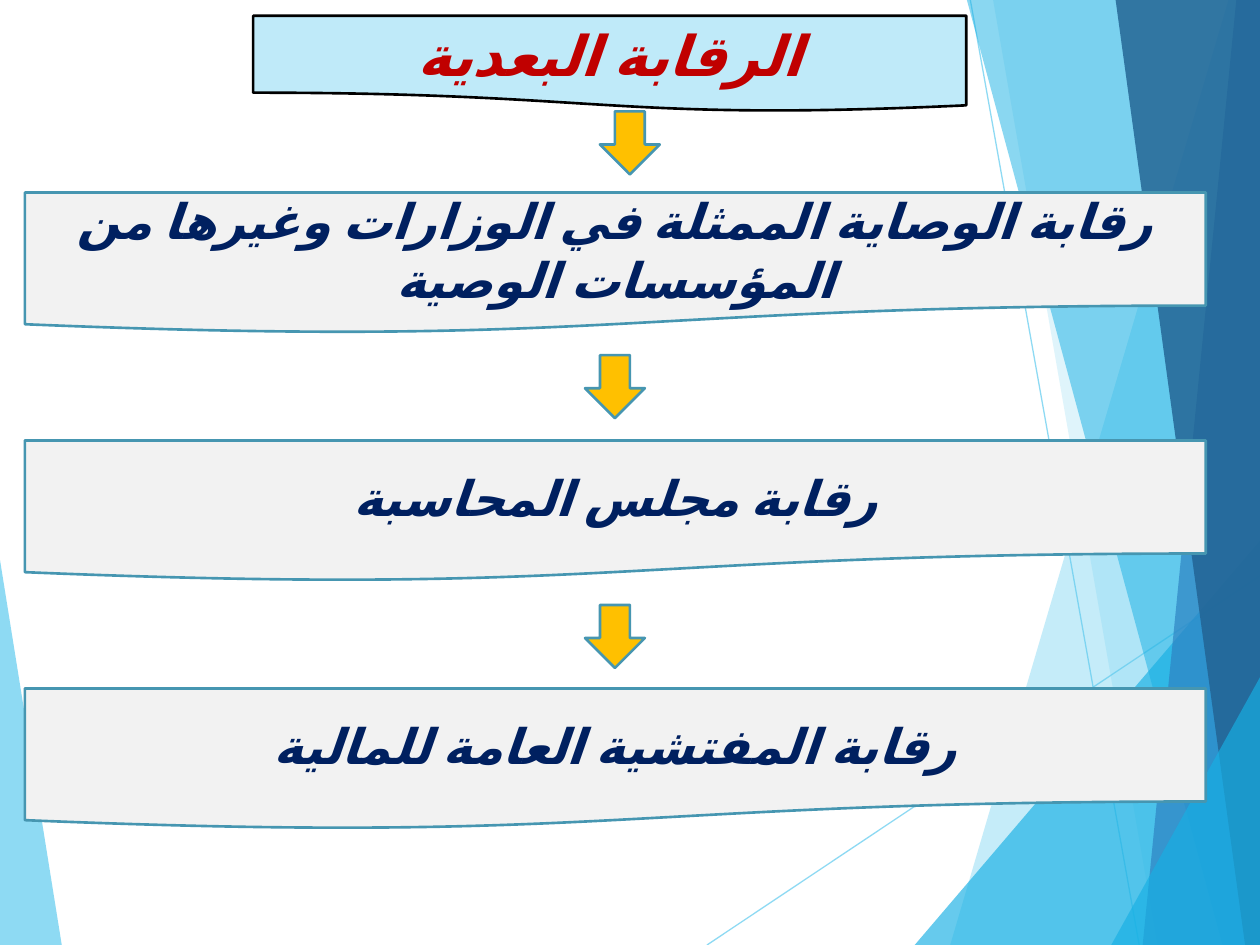
from dataclasses import dataclass

from lxml.etree import SubElement
from pptx import Presentation
from pptx.dml.color import RGBColor
from pptx.enum.shapes import MSO_CONNECTOR, MSO_SHAPE
from pptx.enum.text import MSO_ANCHOR, PP_ALIGN
from pptx.oxml.ns import qn
from pptx.util import Pt


@dataclass(frozen=True)
class Theme:
    font: str = "Roboto"
    language: str = "ar-DZ"
    title_size: int = 32
    step_size: int = 28
    title_text: str = "C00000"
    title_fill: str = "BFEAF9"
    title_line: str = "000000"
    step_text: str = "002060"
    step_fill: str = "F2F2F2"
    outline: str = "4696B1"
    arrow: str = "FFC000"
    sky: str = "5FCBEF"
    cyan: str = "17B0E4"
    blue: str = "2E83C3"
    navy: str = "226292"


THEME = Theme()
WIDTH, HEIGHT = 720, 540
STEPS = [
    "رقابة الوصاية الممثلة في الوزارات وغيرها من المؤسسات الوصية",
    "رقابة مجلس المحاسبة",
    "رقابة المفتشية العامة للمالية",
]
STEP_TOP, STEP_PITCH = 110, 141.7
ARROWS = [(342.8, 63.7), (334.3, 203), (334.3, 345.7)]


def set_alpha(fill, percent):
    color = fill._xPr.find(qn("a:solidFill"))[0]
    SubElement(color, qn("a:alpha"), val=str(percent * 1000))


def add_facet(s, points, color, alpha):
    """Translucent background polygon."""
    start, *rest = [(Pt(x), Pt(y)) for x, y in points]
    builder = s.shapes.build_freeform(*start)
    builder.add_line_segments(rest, close=True)
    sp = builder.convert_to_shape()
    sp.shadow.inherit = False
    sp.fill.solid()
    sp.fill.fore_color.rgb = RGBColor.from_string(color)
    set_alpha(sp.fill, alpha)
    sp.line.fill.background()


def add_ray(s, start, end):
    """Thin translucent background line."""
    ends = [Pt(v) for v in (*start, *end)]
    line = s.shapes.add_connector(MSO_CONNECTOR.STRAIGHT, *ends)
    line.line.color.rgb = RGBColor.from_string(THEME.sky)
    line.line.width = Pt(0.75)
    set_alpha(line.line.fill, 70)
    SubElement(line._element.spPr, qn("a:effectLst"))


def add_block(s, kind, box, fill, outline):
    sp = s.shapes.add_shape(kind, *[Pt(v) for v in box])
    sp.shadow.inherit = False
    sp.fill.solid()
    sp.fill.fore_color.rgb = RGBColor.from_string(fill)
    sp.line.color.rgb = RGBColor.from_string(outline)
    sp.line.width = Pt(1.5)
    return sp


def write_text(sp, text, size, color):
    """Centred right-to-left bold italic Arabic text."""
    tf = sp.text_frame
    tf.word_wrap = True
    tf.vertical_anchor = MSO_ANCHOR.MIDDLE
    p = tf.paragraphs[0]
    p.alignment = PP_ALIGN.CENTER
    p._p.get_or_add_pPr().set("rtl", "1")
    r = p.add_run()
    r.text = text
    formats = {"name": THEME.font, "size": Pt(size), "bold": True, "italic": True}
    for name, value in formats.items():
        setattr(r.font, name, value)
    r.font.color.rgb = RGBColor.from_string(color)
    rPr = r._r.get_or_add_rPr()
    rPr.set("lang", THEME.language)
    SubElement(rPr, qn("a:cs"), typeface=THEME.font)


def panel(top_x, bottom_x):
    """Area from a slanted edge to the right side of the slide."""
    return [(top_x, 0), (bottom_x, HEIGHT), (WIDTH, HEIGHT), (WIDTH, 0)]


def wedge(bottom_x, right_y):
    """Triangle in the lower right corner."""
    return [(bottom_x, HEIGHT), (WIDTH, right_y), (WIDTH, HEIGHT)]


def add_background(s):
    add_facet(s, [(0, 320), (35.3, HEIGHT), (0, HEIGHT)], THEME.sky, 70)
    add_ray(s, (404, HEIGHT), (WIDTH, 329))
    add_ray(s, (554.5, 0), (651, HEIGHT))
    facets = [
        (panel(702, 543), THEME.sky, 36),
        (panel(567.5, 661.5), THEME.sky, 20),
        (wedge(522.7, 309), THEME.cyan, 66),
        (panel(552.5, 698.5), THEME.cyan, 50),
        (panel(706.5, 653), THEME.blue, 70),
        (panel(637.5, 711.5), THEME.navy, 82),
        (wedge(635, 387), THEME.cyan, 66),
    ]
    for points, color, alpha in facets:
        add_facet(s, points, color, alpha)


def add_title(s, text):
    left, top, width, height = 144.7, 9, 407.5, 54.8
    banner = add_block(s, MSO_SHAPE.FLOWCHART_DOCUMENT, (left, top, width, height),
                       THEME.title_fill, THEME.title_line)
    banner._element.spPr.xfrm.set("flipH", "1")
    # Title sits above the banner's wavy edge
    title = s.shapes.title
    box = {"left": left, "top": top, "width": width, "height": height * 0.8}
    for name, value in box.items():
        setattr(title, name, Pt(value))
    write_text(title, text, THEME.title_size, THEME.title_text)
    banner._element.addnext(title._element)


def add_step(s, index, text):
    box = (14.2, STEP_TOP + index * STEP_PITCH, 674.8, 80.6)
    sp = add_block(s, MSO_SHAPE.FLOWCHART_DOCUMENT, box, THEME.step_fill, THEME.outline)
    write_text(sp, text, THEME.step_size, THEME.step_text)


def main():
    prs = Presentation()
    prs.slide_width, prs.slide_height = Pt(WIDTH), Pt(HEIGHT)
    s = prs.slides.add_slide(prs.slide_layouts[5])

    # Faceted background
    add_background(s)

    # Title, then the steps and the arrows leading to them
    add_title(s, "الرقابة البعدية")
    for i, text in enumerate(STEPS):
        add_step(s, i, text)
    for x, y in ARROWS:
        add_block(s, MSO_SHAPE.DOWN_ARROW, (x, y, 34.2, 36), THEME.arrow, THEME.outline)

    prs.save("out.pptx")


if __name__ == "__main__":
    main()
